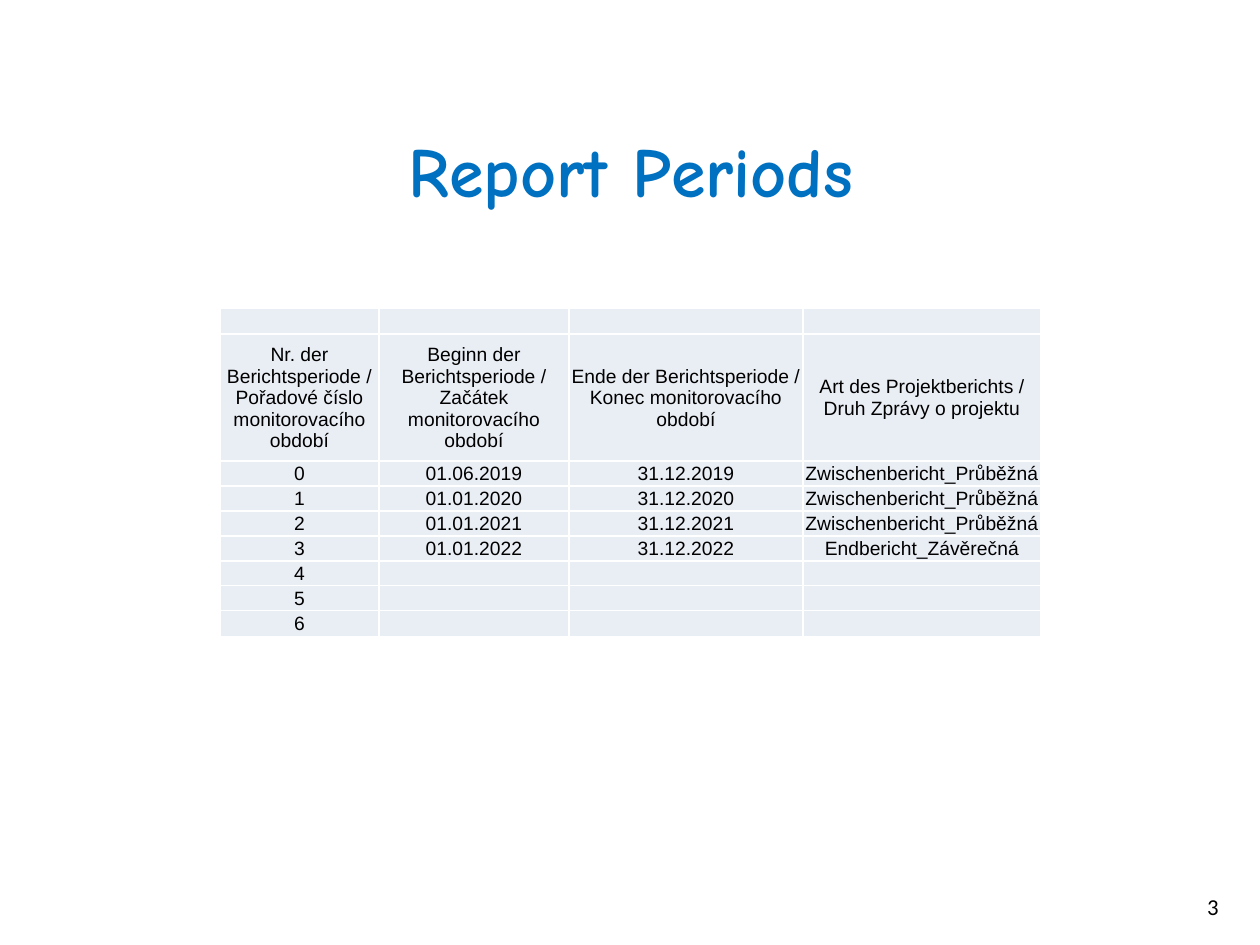
import lxml.etree
import pptx
import pptx.dml.color
import pptx.enum.text
import pptx.oxml.ns
import pptx.util

PX = 914400 // 126
BLUE = pptx.dml.color.RGBColor(0x00, 0x70, 0xC0)
BLACK = pptx.dml.color.RGBColor(0x00, 0x00, 0x00)
PALE = pptx.dml.color.RGBColor(0xE9, 0xED, 0xF4)
WHITE = pptx.dml.color.RGBColor(0xFF, 0xFF, 0xFF)
ALIGN = pptx.enum.text.PP_ALIGN
ANCHOR = pptx.enum.text.MSO_ANCHOR
qn = pptx.oxml.ns.qn

COLUMN_WIDTHS = [159, 190, 234, 238]
ROW_HEIGHTS = [26, 127] + [25] * 6 + [26]
HEADINGS = [
    "Nr. der Berichtsperiode /\vPořadové číslo monitorovacího období",
    "Beginn der Berichtsperiode /\vZačátek monitorovacího období",
    "Ende der Berichtsperiode /\vKonec monitorovacího období",
    "Art des Projektberichts /\vDruh Zprávy o projektu",
]
INTERIM = "Zwischenbericht_Průběžná"
PERIODS = [
    ["0", "01.06.2019", "31.12.2019", INTERIM],
    ["1", "01.01.2020", "31.12.2020", INTERIM],
    ["2", "01.01.2021", "31.12.2021", INTERIM],
    ["3", "01.01.2022", "31.12.2022", "Endbericht_Závěrečná"],
] + [[number, "", "", ""] for number in "456"]


def write_text(frame, text, size, font, color=BLACK, bold=False, align=ALIGN.CENTER):
    paragraph = frame.paragraphs[0]
    paragraph.text = text
    paragraph.alignment = align
    for run in paragraph.runs:
        run.font.size = pptx.util.Pt(size)
        run.font.name = font
        run.font.bold = bold
        run.font.color.rgb = color
    for line_break in paragraph._p.findall(qn("a:br")):
        lxml.etree.SubElement(line_break, qn("a:rPr"), sz=str(size * 100))
    if not text:
        lxml.etree.SubElement(paragraph._p, qn("a:endParaRPr"), sz=str(size * 100))


def add_label(slide, box, text, anchor=ANCHOR.TOP, **text_format):
    frame = slide.shapes.add_textbox(*(v * PX for v in box)).text_frame
    frame.word_wrap = True
    frame.vertical_anchor = anchor
    write_text(frame, text, **text_format)


def add_borders(cell):
    properties = cell._tc.get_or_add_tcPr()
    for position, side in enumerate(("a:lnL", "a:lnR", "a:lnT", "a:lnB")):
        line = lxml.etree.Element(qn(side), w=str(pptx.util.Pt(1)))
        fill = lxml.etree.SubElement(line, qn("a:solidFill"))
        lxml.etree.SubElement(fill, qn("a:srgbClr"), val=str(WHITE))
        properties.insert(position, line)


def add_periods(slide, box):
    rows = [[""] * len(HEADINGS), HEADINGS] + PERIODS
    periods = slide.shapes.add_table(
        len(rows), len(HEADINGS), *(v * PX for v in box)).table
    periods.first_row = False
    periods.horz_banding = False
    for column, width in zip(periods.columns, COLUMN_WIDTHS):
        column.width = width * PX
    for row, height, texts in zip(periods.rows, ROW_HEIGHTS, rows):
        row.height = height * PX
        for cell, text in zip(row.cells, texts):
            cell.margin_left = cell.margin_right = cell.margin_top = PX
            cell.margin_bottom = 0
            cell.vertical_anchor = ANCHOR.MIDDLE
            cell.fill.solid()
            cell.fill.fore_color.rgb = PALE
            add_borders(cell)
            write_text(cell.text_frame, text, size=11, font="Arial")


def main():
    deck = pptx.Presentation()
    deck.slide_width = pptx.util.Inches(10)
    deck.slide_height = pptx.util.Inches(7.5)
    slide = deck.slides.add_slide(deck.slide_layouts[6])
    add_label(slide, (64, 125, 1134, 89), "Report Periods", anchor=ANCHOR.MIDDLE,
              size=40, font="Comic Neue", color=BLUE, bold=True)
    add_label(slide, (1155, 887, 76, 45), "3",
              size=13, font="Calibri", align=ALIGN.RIGHT)
    add_periods(slide, (220, 308, sum(COLUMN_WIDTHS), sum(ROW_HEIGHTS)))
    deck.save("out.pptx")


if __name__ == "__main__":
    main()
